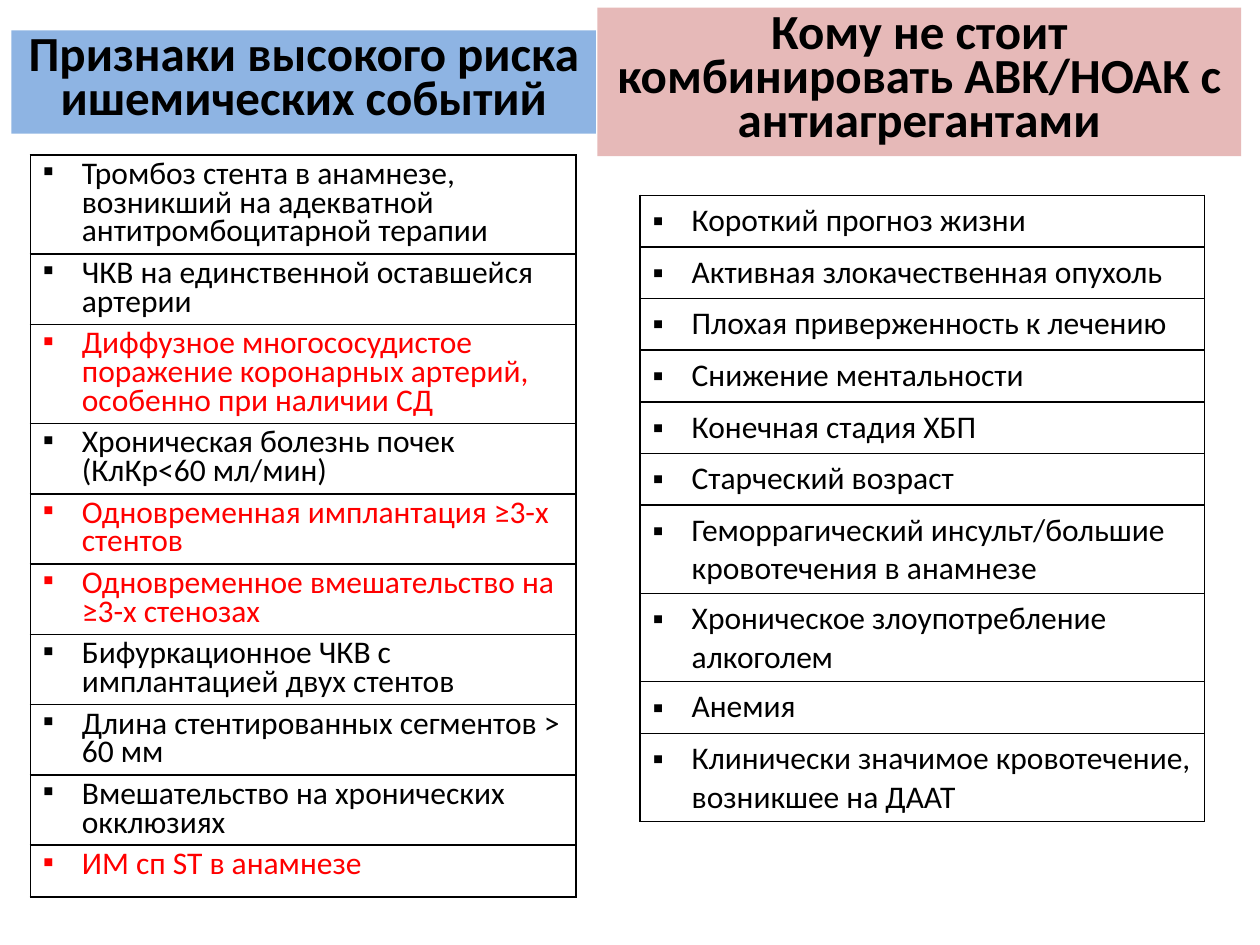
from lxml.etree import SubElement as Sub
from pptx import Presentation
from pptx.dml.color import RGBColor as RGB
from pptx.enum.shapes import MSO_SHAPE as Shape
from pptx.enum.text import MSO_ANCHOR as Anchor, MSO_AUTO_SIZE as Fit, PP_ALIGN as Align
from pptx.oxml.ns import qn
from pptx.util import Inches, Pt

BLACK = RGB(0x00, 0x00, 0x00)
RED = RGB(0xFF, 0x00, 0x00)
BLUE = RGB(0x8E, 0xB4, 0xE3)
PINK = RGB(0xE6, 0xB9, 0xB8)

COLS, ROWS = 100, 75
TIGHT = 0.75

# Each risk is its text and its colour.
RISKS = [
    ("Тромбоз стента в анамнезе, возникший на адекватной антитромбоцитарной терапии", BLACK),
    ("ЧКВ на единственной оставшейся артерии", BLACK),
    ("Диффузное многососудистое поражение коронарных артерий, особенно при наличии СД", RED),
    ("Хроническая болезнь почек (КлКр<60 мл/мин)", BLACK),
    ("Одновременная имплантация ≥3-х стентов", RED),
    ("Одновременное вмешательство на ≥3-х стенозах", RED),
    ("Бифуркационное ЧКВ с имплантацией двух стентов", BLACK),
    ("Длина стентированных сегментов > 60 мм", BLACK),
    ("Вмешательство на хронических окклюзиях", BLACK),
    ("ИМ сп ST в анамнезе", RED),
]
LIMITS = [(text, BLACK) for text in (
    "Короткий прогноз жизни",
    "Активная злокачественная опухоль",
    "Плохая приверженность к лечению",
    "Снижение ментальности",
    "Конечная стадия ХБП",
    "Старческий возраст",
    "Геморрагический инсульт/большие кровотечения в анамнезе",
    "Хроническое злоупотребление алкоголем",
    "Анемия",
    "Клинически значимое кровотечение, возникшее на ДААТ",
)]


class Deck:
    """Style and current slide; lengths are columns and rows of the grid."""
    face = "Calibri"
    head, body = Pt(28), Pt(18)
    dent = Inches(0.31)
    line = Pt(1)
    row = 4.1

    def __init__(self):
        self.show = Presentation()
        self.show.slide_width, self.show.slide_height = Inches(10), Inches(7.5)
        self.slide = self.show.slides.add_slide(self.show.slide_layouts[6])

    def place(self, left, top, width, height):
        col, row = self.show.slide_width / COLS, self.show.slide_height / ROWS
        return [int(n) for n in (left * col, top * row, width * col, height * row)]

    def label(self, para, text, size, color, space=None, bold=False):
        para.text = text
        para.line_spacing = space
        font = para.font
        font.name, font.size, font.bold = self.face, size, bold
        font.color.rgb = color

    def title(self, text, fill, *area):
        box = self.slide.shapes.add_shape(Shape.RECTANGLE, *self.place(*area))
        box.shadow.inherit = False
        box.fill.solid()
        box.fill.fore_color.rgb = fill
        box.line.fill.background()
        frame = box.text_frame
        frame.word_wrap = True
        frame.auto_size = Fit.SHAPE_TO_FIT_TEXT
        frame.vertical_anchor = Anchor.TOP
        para = frame.paragraphs[0]
        self.label(para, text, self.head, BLACK, TIGHT, True)
        para.alignment = Align.CENTER

    def bullet(self, para):
        props = para._p.get_or_add_pPr()
        props.set("marL", str(self.dent))
        props.set("indent", str(-self.dent))
        Sub(props, qn("a:buFont"), typeface="Arial")
        Sub(props, qn("a:buChar"), char="▪")

    def border(self, cell):
        props = cell._tc.get_or_add_tcPr()
        for spot, side in enumerate("LRTB"):
            edge = Sub(props, qn("a:ln" + side), w=str(self.line))
            fill = Sub(edge, qn("a:solidFill"))
            Sub(fill, qn("a:srgbClr"), val=str(BLACK))
            props.insert(spot, edge)

    def table(self, items, left, top, width, space=None):
        area = self.place(left, top, width, self.row * len(items))
        grid = self.slide.shapes.add_table(len(items), 1, *area).table
        grid.first_row = grid.horz_banding = False
        for cell, (text, color) in zip(grid.iter_cells(), items):
            cell.fill.background()
            self.border(cell)
            para = cell.text_frame.paragraphs[0]
            self.bullet(para)
            self.label(para, text, self.body, color, space)


def main():
    deck = Deck()
    deck.table(RISKS, 2.4, 12.3, 43.3, TIGHT)
    deck.title("Признаки высокого риска ишемических событий", BLUE, 0.9, 2.4, 46.4, 8.2)
    deck.table(LIMITS, 50.8, 15.5, 44.8)
    deck.title("Кому не стоит комбинировать АВК/НОАК с антиагрегантами", PINK, 47.4, 0.6, 51.1, 11.8)
    deck.show.save("out.pptx")


if __name__ == "__main__":
    main()
